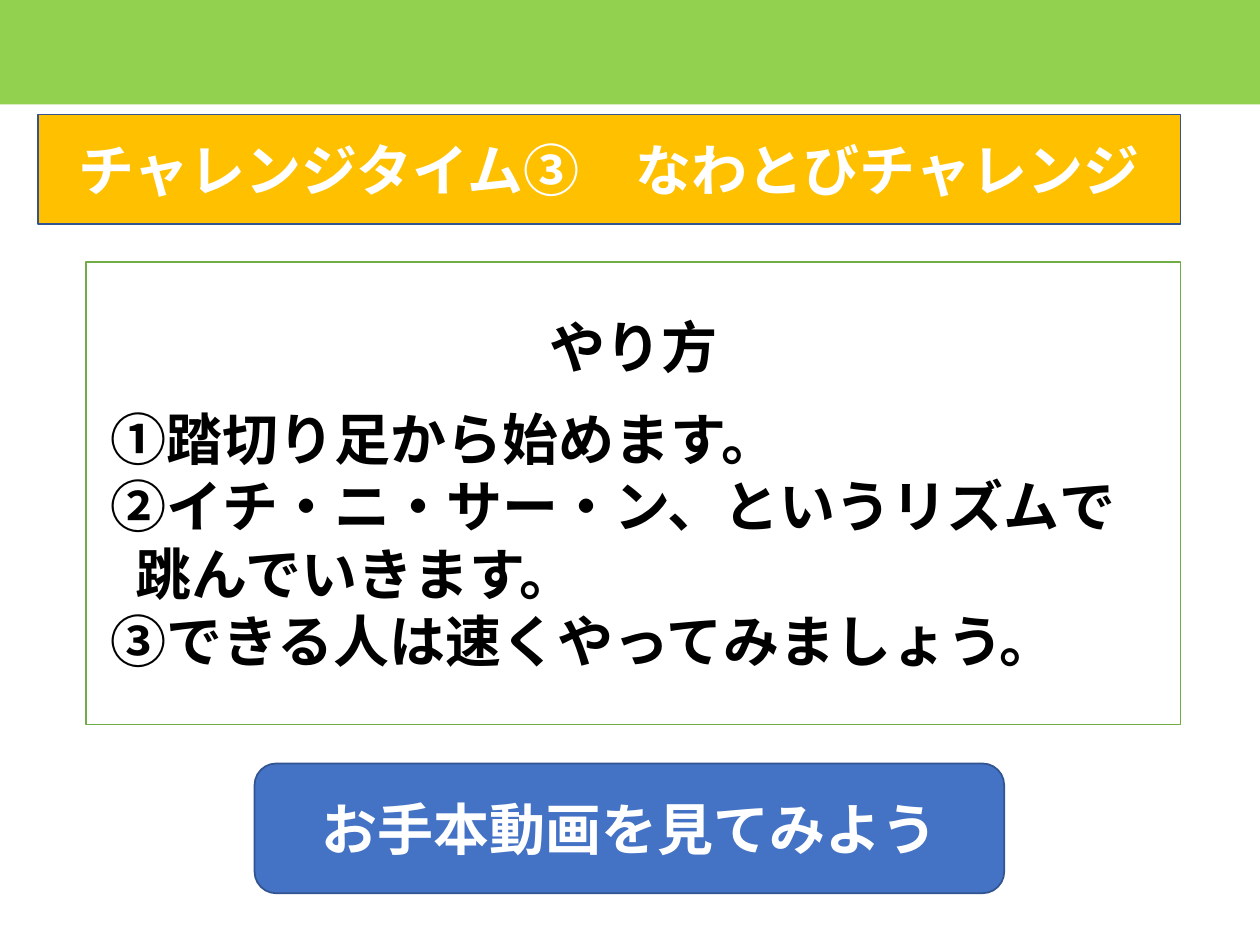
from pptx import Presentation, util as u
from pptx.dml.color import RGBColor
from pptx.enum import shapes, text

W, H = 10, 7.5
RECT = shapes.MSO_SHAPE.RECTANGLE
ROUND = shapes.MSO_SHAPE.ROUNDED_RECTANGLE
MID, LEFT = text.PP_ALIGN.CENTER, text.PP_ALIGN.LEFT
EDGE = "325491"
RIGHT = 9.37  # shared right edge of title and steps

# each line: text, alignment, indent in inches, space after in points
STEPS = [
    ("やり方", MID, 0, 14),
    ("①踏切り足から始めます。", LEFT, 0.1, 0),
    ("②イチ・ニ・サー・ン、というリズムで", LEFT, 0.1, 0),
    ("跳んでいきます。", LEFT, 0.3, 0),
    ("③できる人は速くやってみましょう。", LEFT, 0.1, 0),
]
TITLE = [("チャレンジタイム③　なわとびチャレンジ", MID, 0, 0)]
BUTTON = [("お手本動画を見てみよう", MID, 0, 0)]

# kind, (left, top, width, height), fill, line, text colour, lines
BOXES = [
    (RECT, (0.68, 2.08, RIGHT - 0.68, 3.67), "FFFFFF", "70AD47", "000000", STEPS),
    (RECT, (0, 0, W, 0.83), "92D050", None, "FFFFFF", []),
    (RECT, (0.3, 0.91, RIGHT - 0.3, 0.87), "FFC000", EDGE, "FFFFFF", TITLE),
    (ROUND, (2.02, 6.06, 5.95, 1.03), "4472C4", EDGE, "FFFFFF", BUTTON),
]


def tint(fmt, hue):
    fmt.rgb = RGBColor.from_string(hue)


def write(frame, lines, hue):
    frame.word_wrap = True
    frame.vertical_anchor = text.MSO_ANCHOR.MIDDLE
    for i, (words, align, indent, after) in enumerate(lines):
        para = frame.add_paragraph() if i else frame.paragraphs[0]
        para.alignment = align
        para.space_after = u.Pt(after)
        para._p.get_or_add_pPr().set("marL", str(u.Inches(indent)))
        run = para.add_run()
        run.text = words
        font = run.font
        font.name, font.size, font.bold = "Calibri", u.Pt(32), True
        tint(font.color, hue)


def draw(slide, kind, place, fill, line, hue, lines):
    box = slide.shapes.add_shape(kind, *map(u.Inches, place))
    box.shadow.inherit = False
    box.fill.solid()
    tint(box.fill.fore_color, fill)
    if line:
        tint(box.line.color, line)
        box.line.width = u.Pt(1)
    else:
        box.line.fill.background()
    write(box.text_frame, lines, hue)


deck = Presentation()
deck.slide_width, deck.slide_height = u.Inches(W), u.Inches(H)
slide = deck.slides.add_slide(deck.slide_layouts[6])
for box in BOXES:
    draw(slide, *box)
deck.save("out.pptx")
